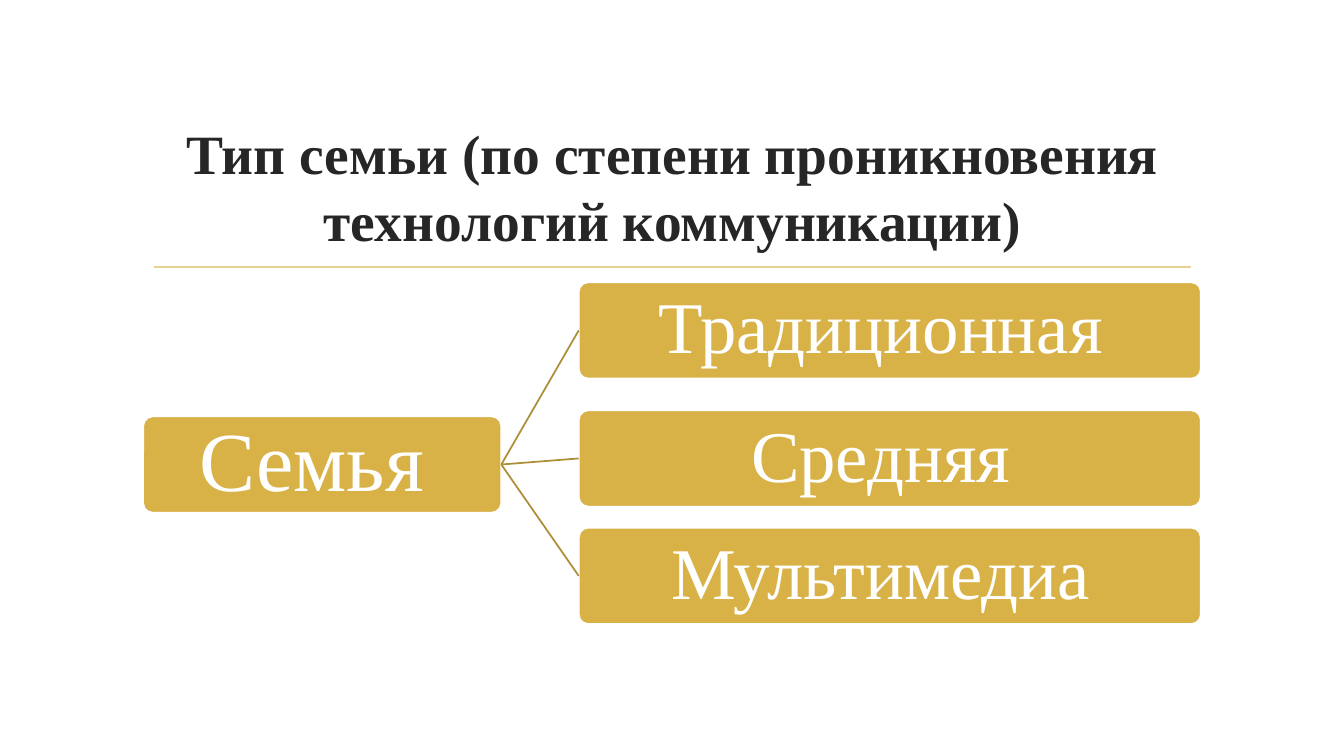
from lxml.etree import SubElement
from pptx import Presentation
from pptx.dml.color import RGBColor
from pptx.enum.shapes import MSO_CONNECTOR as CONN, MSO_SHAPE as SHAPE
from pptx.enum.text import MSO_ANCHOR as ANCHOR, MSO_AUTO_SIZE as AUTO, PP_ALIGN as ALIGN
from pptx.oxml.ns import qn
from pptx.util import Inches, Pt

COLORS = {"title": "262626", "gold": "D9B247", "link": "AE8F39",
          "rule": "E8D191", "white": "FFFFFF"}


class Deck:
    """Holds the style and the current slide; lengths are percent of the slide size."""

    font = "Times New Roman"
    line_width = Pt(1.25)

    def __init__(self):
        self.prs = Presentation()
        self.prs.slide_width, self.prs.slide_height = Inches(13.33), Inches(7.5)
        self.s = self.prs.slides.add_slide(self.prs.slide_layouts[5])

    def color(self, name):
        return RGBColor.from_string(COLORS[name])

    def x(self, share):
        return round(self.prs.slide_width * share / 100)

    def y(self, share):
        return round(self.prs.slide_height * share / 100)

    def frame(self, x, y, w, h):
        return self.x(x), self.y(y), self.x(w), self.y(h)

    def text(self, sp, text, size, color, bold=False):
        tf = sp.text_frame
        tf.word_wrap, tf.auto_size = True, AUTO.NONE
        tf.vertical_anchor = ANCHOR.MIDDLE
        p = tf.paragraphs[0]
        p.alignment = ALIGN.CENTER
        r = p.add_run()
        r.text = text
        r.font.name, r.font.size, r.font.bold = self.font, Pt(size), bold
        r.font.color.rgb = self.color(color)
        return tf

    def title(self, text, *box):
        sp = self.s.shapes.title
        sp.left, sp.top, sp.width, sp.height = self.frame(*box)
        tf = self.text(sp, text, 39.6, "title", True)
        tf.margin_top = Inches(0.17)

    def box(self, text, size, *box):
        sp = self.s.shapes.add_shape(SHAPE.ROUNDED_RECTANGLE, *self.frame(*box))
        sp.adjustments[0] = 0.1
        sp.shadow.inherit = False
        sp.fill.solid()
        sp.fill.fore_color.rgb = self.color("gold")
        sp.line.color.rgb = self.color("white")
        sp.line.width = self.line_width
        tf = self.text(sp, text, size, "white")
        tf.margin_left = tf.margin_right = tf.margin_top = tf.margin_bottom = Inches(0.07)
        tf.paragraphs[0].line_spacing = 0.9
        return sp

    def line(self, color, x1=0, y1=0, x2=0, y2=0):
        c = self.s.shapes.add_connector(CONN.STRAIGHT, self.x(x1), self.y(y1),
                                        self.x(x2), self.y(y2))
        c.line.color.rgb = self.color(color)
        c.line.width = self.line_width
        SubElement(c._element.spPr, qn("a:effectLst"))
        return c

    def link(self, start, end):
        c = self.line("link")
        c.begin_connect(start, 3)
        c.end_connect(end, 1)


def main():
    deck = Deck()
    deck.line("rule", 11.48, 35.33, 88.6, 35.33)
    deck.title("Тип семьи (по степени проникновения технологий коммуникации)",
               10.65, 14.27, 78.77, 19.07)
    height = 12.75
    family = deck.box("Семья ", 60, 10.65, 55.07, 26.65, height)
    for name, top in (("Традиционная ", 37.33), ("Средняя ", 54.27), ("Мультимедиа ", 69.8)):
        deck.link(family, deck.box(name, 52, 43.06, top, 46.29, height))
    deck.prs.save("out.pptx")


if __name__ == "__main__":
    main()
